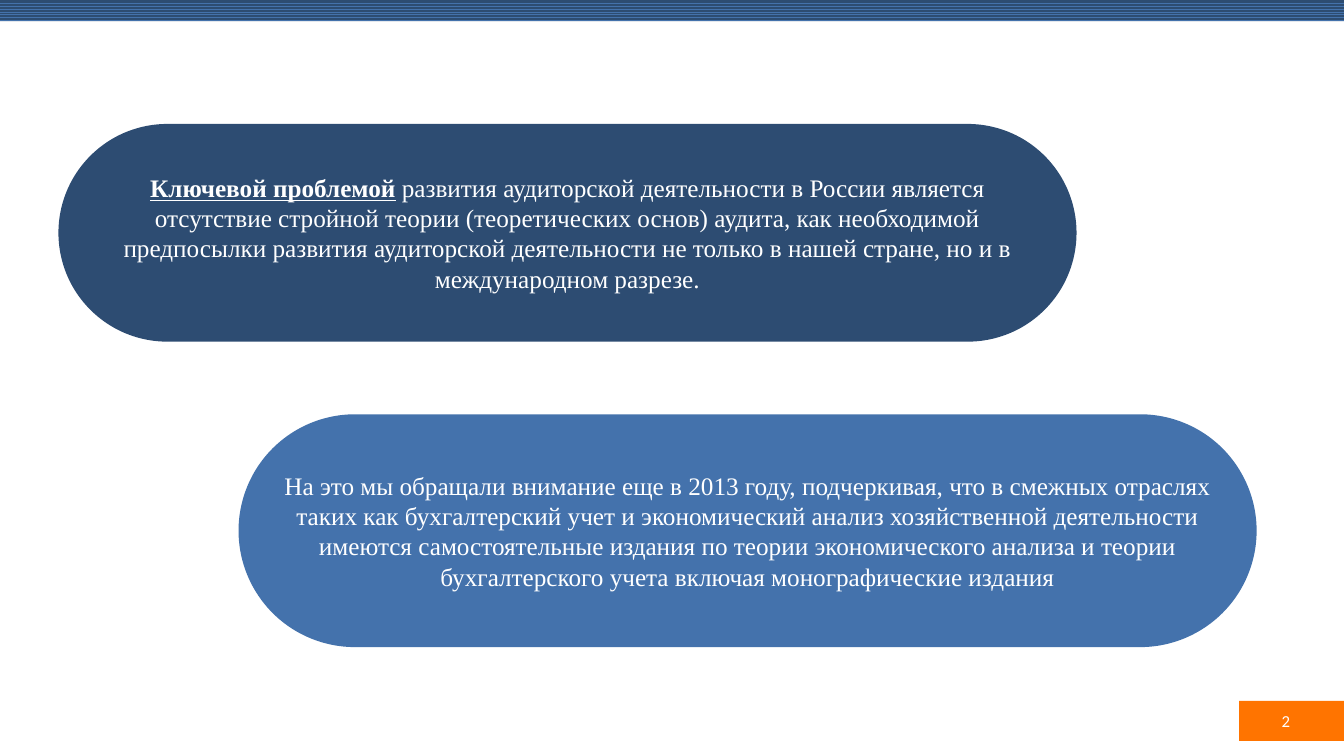
from pptx import Presentation
from pptx.dml.color import RGBColor
from pptx.enum.dml import MSO_PATTERN
from pptx.enum.shapes import MSO_SHAPE
from pptx.enum.text import MSO_ANCHOR, PP_ALIGN
from pptx.util import Inches, Pt

WIDTH, HEIGHT = Inches(13.33), Inches(7.5)
COLUMN, ROW = WIDTH / 100, HEIGHT / 100
NAVY, BLUE, ORANGE, WHITE = "2D4C72", "4472AC", "FF7400", "FFFFFF"

PROBLEM = [
    ("Ключевой проблемой", True),
    (" развития аудиторской деятельности в России является отсутствие стройной "
     "теории (теоретических основ) аудита, как необходимой предпосылки развития "
     "аудиторской деятельности не только в нашей стране, но и в международном "
     "разрезе.", False),
]
REMINDER = [
    ("На это мы обращали внимание еще в 2013 году, подчеркивая, что в смежных "
     "отраслях таких как бухгалтерский учет и экономический анализ хозяйственной "
     "деятельности имеются самостоятельные издания по теории экономического "
     "анализа и теории бухгалтерского учета включая монографические издания", False),
]


def color(value):
    """Turn a hex string into a colour."""
    return RGBColor.from_string(value)


def add_block(page, kind, box, fill):
    """Add a borderless shape at a box of columns and rows."""
    left, top, width, height = box
    shape = page.shapes.add_shape(kind, round(left * COLUMN), round(top * ROW),
                                  round(width * COLUMN), round(height * ROW))
    shape.shadow.inherit = False
    shape.line.fill.background()
    shape.fill.solid()
    shape.fill.fore_color.rgb = color(fill)
    return shape


def write(shape, parts, font, size, align):
    """Write (text, emphasis) parts as one paragraph in a shape."""
    frame = shape.text_frame
    frame.word_wrap = True
    frame.vertical_anchor = MSO_ANCHOR.MIDDLE
    para = frame.paragraphs[0]
    para.alignment = align
    for text, emphasis in parts:
        span = para.add_run()
        span.text = text
        span.font.name = font
        span.font.size = Pt(size)
        span.font.color.rgb = color(WHITE)
        span.font.bold = span.font.underline = emphasis


def add_band(page, box):
    """Add the zigzag band along the top edge."""
    band = add_block(page, MSO_SHAPE.RECTANGLE, box, NAVY)
    band.fill.patterned()
    band.fill.pattern = MSO_PATTERN.ZIG_ZAG
    band.fill.fore_color.rgb = color(BLUE)
    band.fill.back_color.rgb = color(NAVY)


def add_page_number(page, box, number):
    """Add the page number badge in the lower right corner."""
    badge = add_block(page, MSO_SHAPE.RECTANGLE, box, ORANGE)
    badge.text_frame.margin_right = round(4 * COLUMN)
    write(badge, [(number, False)], "Calibri", 12, PP_ALIGN.RIGHT)


def add_pill(page, box, fill, parts):
    """Add a fully rounded statement with centred text."""
    pill = add_block(page, MSO_SHAPE.ROUNDED_RECTANGLE, box, fill)
    pill.adjustments[0] = 0.5
    write(pill, parts, "Times New Roman", 18, PP_ALIGN.CENTER)


def main():
    """Build and save the deck."""
    deck = Presentation()
    deck.slide_width, deck.slide_height = WIDTH, HEIGHT
    page = deck.slides.add_slide(deck.slide_layouts[6])
    add_band(page, (0, 0, 100, 2.8))
    add_page_number(page, (92.2, 92.7, 7.8, 5.3), "2")
    add_pill(page, (17.75, 54.8, 75.75, 30.8), BLUE, REMINDER)
    add_pill(page, (4.35, 16.4, 75.75, 28.8), NAVY, PROBLEM)
    deck.save("out.pptx")


if __name__ == "__main__":
    main()
